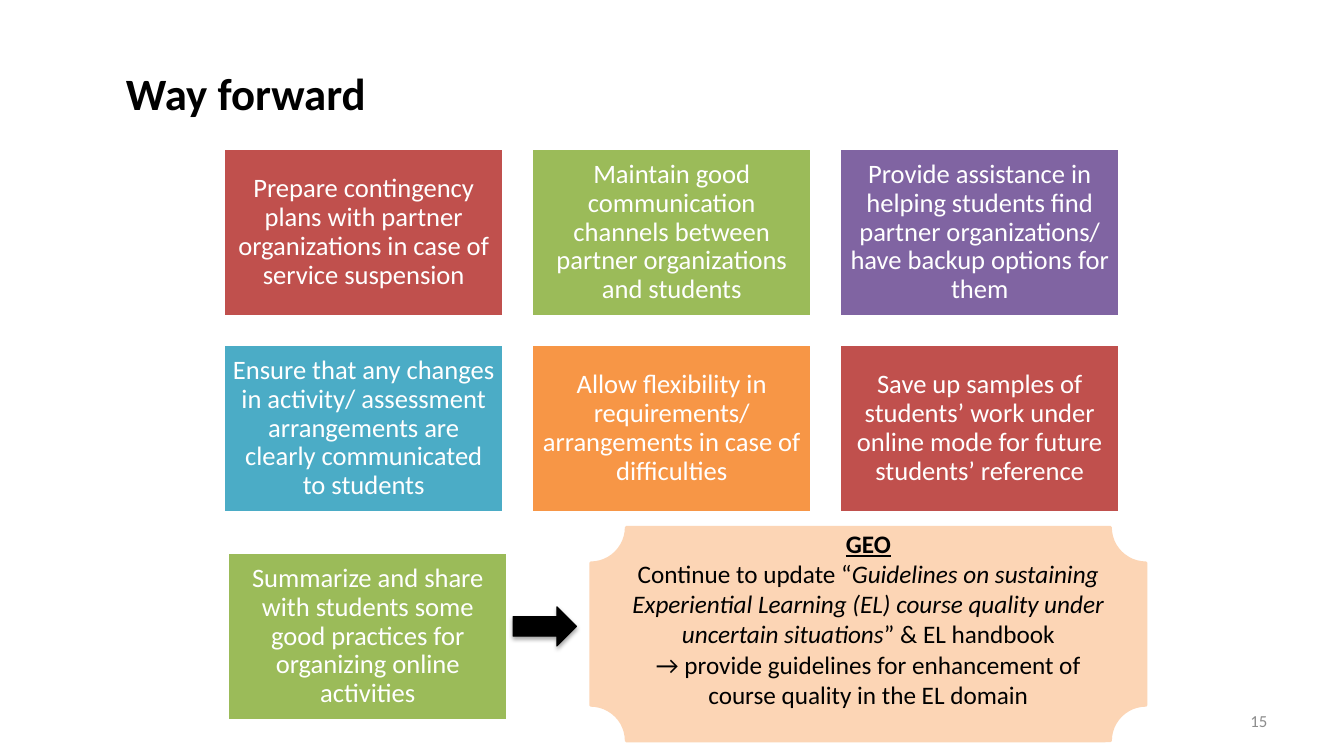
from typing import NamedTuple

from lxml import etree
from pptx import Presentation
from pptx.dml.color import RGBColor
from pptx.enum.shapes import MSO_SHAPE as Preset
from pptx.enum.text import MSO_ANCHOR as Anchor, PP_ALIGN as Align
from pptx.oxml.ns import qn
from pptx.util import Pt

FONT = "Calibri"
BLACK, WHITE, GREY = "000000", "FFFFFF", "8C8C8C"
RED, GREEN, PURPLE = "C0504D", "9BBB59", "8064A2"
TEAL, ORANGE, PEACH = "4BACC6", "F79646", "FCD5B5"

TILE_WIDTH, TILE_HEIGHT = 200, 120
GRID_LEFT, GRID_TOP = 159.8, 106
COLUMN_STEP, ROW_STEP = 220, 140
COLUMNS = 3


class Area(NamedTuple):
    left: float
    top: float
    width: float
    height: float


class Span(NamedTuple):
    text: str
    bold: bool = False
    italic: bool = False
    underline: bool = False


class Tile(NamedTuple):
    text: str
    fill: str


GRID_TILES = [
    Tile("Prepare contingency plans with partner organizations in case of "
         "service suspension", RED),
    Tile("Maintain good communication channels between partner organizations "
         "and students", GREEN),
    Tile("Provide assistance in helping students find partner organizations/ "
         "have backup options for them", PURPLE),
    Tile("Ensure that any changes in activity/ assessment arrangements are "
         "clearly communicated to students", TEAL),
    Tile("Allow flexibility in requirements/ arrangements in case of "
         "difficulties", ORANGE),
    Tile("Save up samples of students’ work under online mode for future "
         "students’ reference", RED),
]
SHARING_TILE = Tile("Summarize and share with students some good practices for "
                    "organizing online activities", GREEN)
GEO_PARAGRAPHS = [
    [Span("GEO", bold=True, underline=True)],
    [Span("Continue to update “"),
     Span("Guidelines on sustaining Experiential Learning (EL) course quality "
          "under uncertain situations", italic=True),
     Span("” & EL handbook")],
    [Span("→ provide guidelines for enhancement of course quality in the EL "
          "domain")],
]


def color(value: str) -> RGBColor:
    return RGBColor.from_string(value)


def in_points(area: Area) -> list:
    return [Pt(length) for length in area]


def add_paragraph(frame, spans: list, size: float, ink: str, align, first: bool):
    para = frame.paragraphs[0] if first else frame.add_paragraph()
    para.alignment = align
    for span in spans:
        run = para.add_run()
        run.text = span.text
        font = run.font
        font.name, font.size = FONT, Pt(size)
        font.bold, font.italic, font.underline = span.bold, span.italic, span.underline
        font.color.rgb = color(ink)
    return para


def add_label(page, area: Area, span: Span, size: float, ink: str, align) -> None:
    box = page.shapes.add_textbox(*in_points(area))
    frame = box.text_frame
    frame.word_wrap = True
    frame.vertical_anchor = Anchor.MIDDLE
    add_paragraph(frame, [span], size, ink, align, first=True)


def add_block(page, preset, area: Area, fill: str, line: str, weight: float):
    block = page.shapes.add_shape(preset, *in_points(area))
    block.shadow.inherit = False
    block.fill.solid()
    block.fill.fore_color.rgb = color(fill)
    block.line.color.rgb = color(line)
    block.line.width = Pt(weight)
    block.text_frame.word_wrap = True
    block.text_frame.vertical_anchor = Anchor.MIDDLE
    return block


def add_tile(page, tile: Tile, left: float, top: float) -> None:
    area = Area(left, top, TILE_WIDTH, TILE_HEIGHT)
    frame = add_block(page, Preset.RECTANGLE, area, tile.fill, WHITE, 2).text_frame
    frame.margin_left = frame.margin_right = Pt(5.7)
    frame.margin_top = frame.margin_bottom = Pt(5.7)
    para = add_paragraph(frame, [Span(tile.text)], 19, WHITE, Align.CENTER, first=True)
    para.line_spacing = 0.9


def add_soft_shadow(block) -> None:
    effects = block._element.spPr.find(qn("a:effectLst"))
    shadow = etree.SubElement(effects, qn("a:outerShdw"), blurRad=str(Pt(3.1)),
                              dist=str(Pt(1.8)), dir="5400000", rotWithShape="0")
    tint = etree.SubElement(shadow, qn("a:srgbClr"), val=BLACK)
    etree.SubElement(tint, qn("a:alpha"), val="35000")


def main() -> None:
    deck = Presentation()
    deck.slide_width, deck.slide_height = Pt(960), Pt(540)
    page = deck.slides.add_slide(deck.slide_layouts[6])

    # Title and page number
    add_label(page, Area(82.8, 21, 864, 90), Span("Way forward", bold=True),
              32, BLACK, Align.LEFT)
    add_label(page, Area(688.3, 500.4, 224, 28.8), Span("15"), 12, GREY, Align.RIGHT)

    # Grid of recommendations, then the sharing tile below it
    for index, tile in enumerate(GRID_TILES):
        row, column = divmod(index, COLUMNS)
        add_tile(page, tile, GRID_LEFT + column * COLUMN_STEP, GRID_TOP + row * ROW_STEP)
    add_tile(page, SHARING_TILE, 162.7, 394.6)

    # Arrow towards the plaque
    arrow = add_block(page, Preset.RIGHT_ARROW, Area(366.5, 433.4, 45.4, 28.1),
                      BLACK, BLACK, 0.75)
    add_soft_shadow(arrow)

    # Plaque, with its text raised by the bottom margin
    plaque = add_block(page, Preset.PLAQUE, Area(421.9, 376.6, 396.7, 152.6),
                       PEACH, PEACH, 2)
    frame = plaque.text_frame
    frame.margin_top, frame.margin_bottom = Pt(0), Pt(22)
    for index, spans in enumerate(GEO_PARAGRAPHS):
        add_paragraph(frame, spans, 18, BLACK, Align.CENTER, first=index == 0)

    deck.save("out.pptx")


if __name__ == "__main__":
    main()
